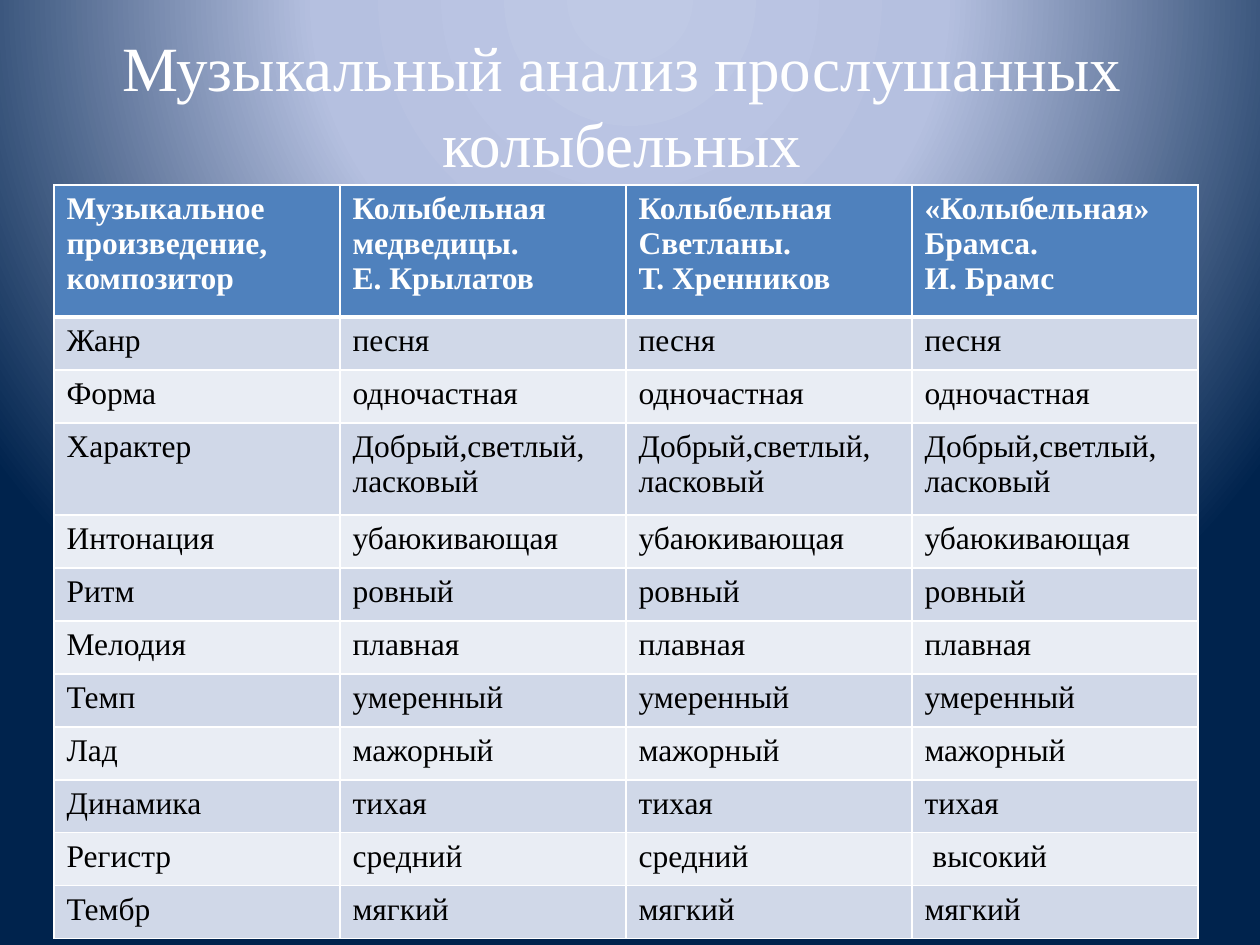
from lxml.etree import SubElement, fromstring
from pptx import Presentation
from pptx.dml.color import RGBColor as Rgb
from pptx.enum.text import MSO_ANCHOR as Anchor, PP_ALIGN as Align
from pptx.oxml.ns import nsdecls, qn
from pptx.util import Pt

PX = 914400 / 126
COLORS = {
    "white": "FFFFFF", "black": "000000",
    "header": "4F81BD", "odd": "D0D8E8", "even": "E9EDF4",
    "glow": "BFC9E5", "haze": "B5C0E0", "night": "00234D",
}


def px(length):
    return round(length * PX)


def write(frame, text, size=18, color="black", bold=False, align=Align.LEFT):
    frame.word_wrap = True
    frame.text = text
    for paragraph in frame.paragraphs:
        paragraph.alignment = align
        font = paragraph.runs[0].font
        font.name, font.size, font.bold = "Times New Roman", Pt(size), bold
        font.color.rgb = Rgb.from_string(COLORS[color])


deck = Presentation()
deck.slide_width, deck.slide_height = px(1260), px(945)
slide = deck.slides.add_slide(deck.slide_layouts[6])

# Background: glow from above the top edge
stops = "".join(
    f'<a:gs pos="{share * 1000}"><a:srgbClr val="{COLORS[name]}"/></a:gs>'
    for share, name in ((0, "glow"), (40, "haze"), (100, "night"))
)
backdrop = slide.background.fill
backdrop.solid()
solid = slide.element.find(".//" + qn("p:bgPr") + "/" + qn("a:solidFill"))
solid.getparent().replace(solid, fromstring(
    f'<a:gradFill {nsdecls("a")} rotWithShape="1"><a:gsLst>{stops}</a:gsLst>'
    '<a:path path="circle"><a:fillToRect l="50000" t="-80000" r="50000" b="180000"/>'
    '</a:path></a:gradFill>'
))

# Title
title = slide.shapes.add_textbox(px(55), px(41), px(1134), px(127)).text_frame
title.vertical_anchor = Anchor.MIDDLE
write(title, "Музыкальный анализ прослушанных колыбельных",
      size=36, color="white", align=Align.CENTER)

# Table content: a feature and its value for each lullaby
header = [
    "Музыкальное произведение, композитор",
    "Колыбельная медведицы.\nЕ. Крылатов",
    "Колыбельная Светланы.\nТ. Хренников",
    "«Колыбельная» Брамса.\nИ. Брамс",
]
shared_features = {
    "Жанр": "песня",
    "Форма": "одночастная",
    "Характер": "Добрый,светлый, ласковый",
    "Интонация": "убаюкивающая",
    "Ритм": "ровный",
    "Мелодия": "плавная",
    "Темп": "умеренный",
    "Лад": "мажорный",
    "Динамика": "тихая",
}
rows = [header]
rows += [[feature] + [value] * 3 for feature, value in shared_features.items()]
rows += [["Регистр", "средний", "средний", " высокий"],
         ["Тембр"] + ["мягкий"] * 3]

heights = [53] * len(rows)
heights[0], heights[3] = 132, 92
analysis = slide.shapes.add_table(
    len(rows), len(header), px(54), px(185), px(1144), px(sum(heights))
).table
for column in analysis.columns:
    column.width = px(286)

# Cells with white borders, thicker below the header
for r, (values, height) in enumerate(zip(rows, heights)):
    analysis.rows[r].height = px(height)
    fill = "header" if r == 0 else ("odd" if r % 2 else "even")
    widths = {"L": 1, "R": 1, "T": 3 if r == 1 else 1, "B": 3 if r == 0 else 1}
    for c, value in enumerate(values):
        cell = analysis.cell(r, c)
        write(cell.text_frame, value, color="black" if r else "white", bold=r == 0)
        properties = cell._tc.get_or_add_tcPr()
        for side, width in widths.items():
            border = SubElement(properties, qn(f"a:ln{side}"), w=str(Pt(width)))
            paint = SubElement(border, qn("a:solidFill"))
            SubElement(paint, qn("a:srgbClr"), val=COLORS["white"])
        cell.fill.solid()
        cell.fill.fore_color.rgb = Rgb.from_string(COLORS[fill])

deck.save("out.pptx")
